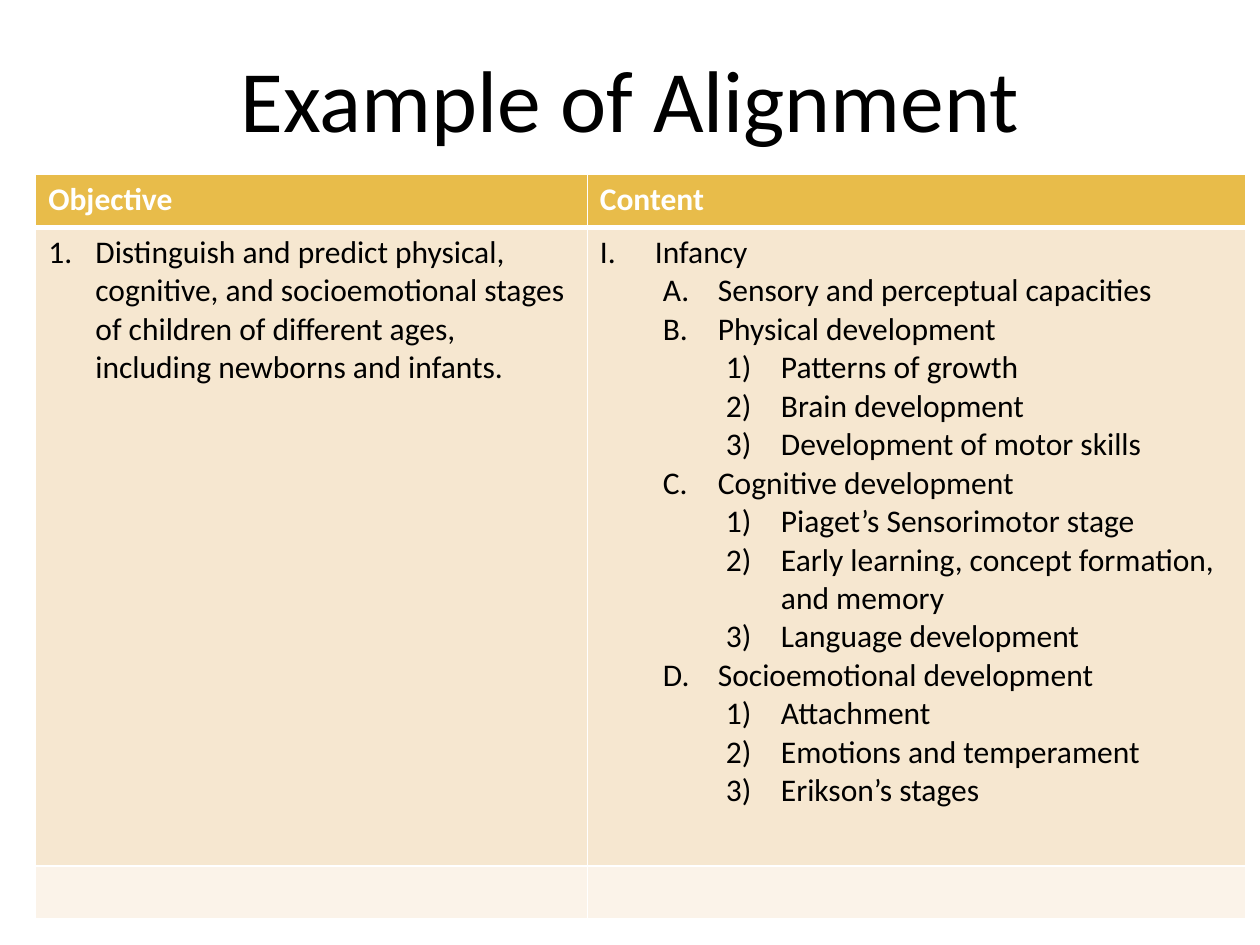
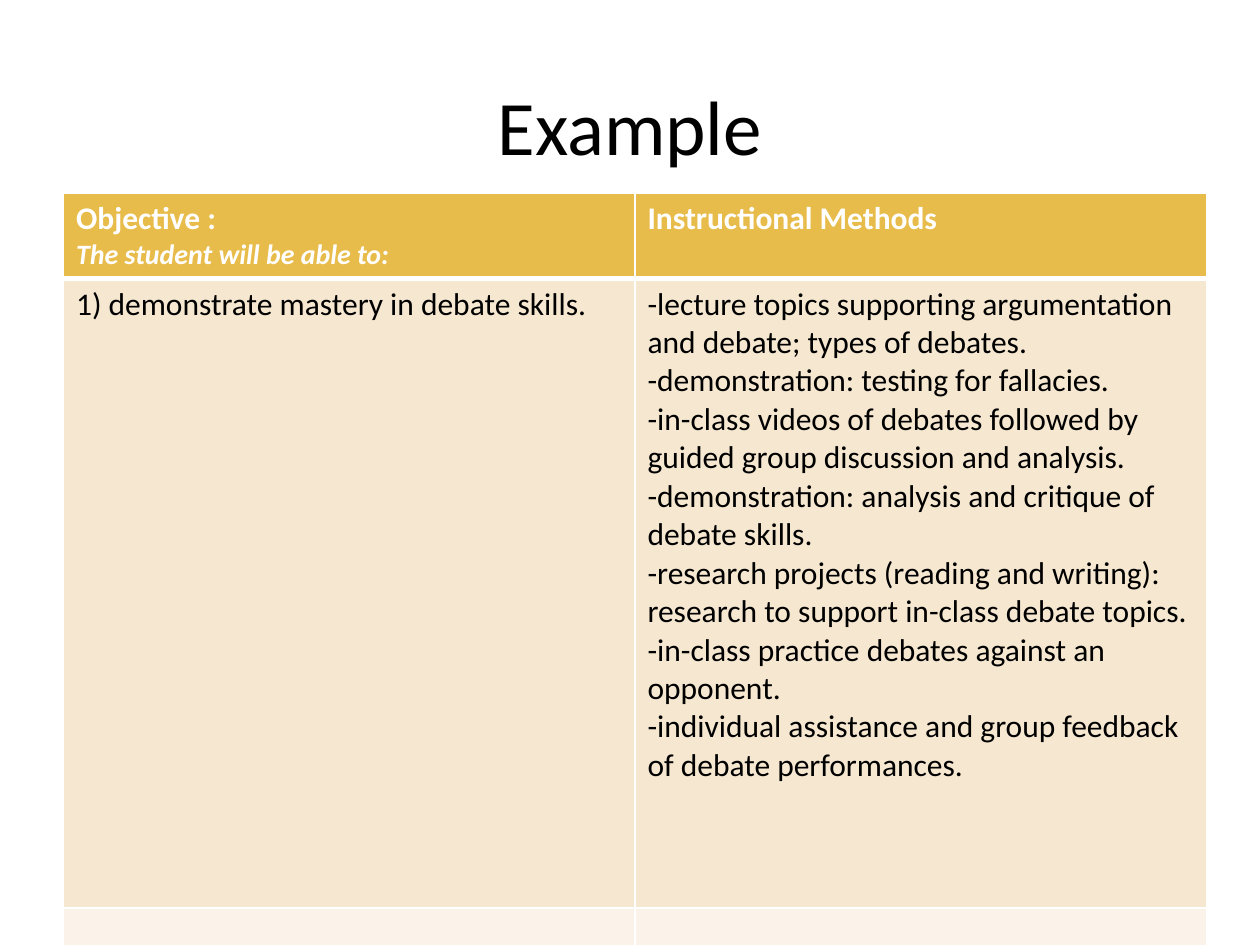
from dataclasses import dataclass

from lxml import etree
from pptx import Presentation
from pptx import util as u
from pptx.dml import color
from pptx.enum import text
from pptx.oxml import ns


@dataclass(frozen=True)
class Theme:
    font: str = "Calibri"
    ink: str = "000000"
    white: str = "FFFFFF"
    header_fill: str = "E8BC4A"
    body_fill: str = "F6E7D0"
    footer_fill: str = "FBF3E9"
    text_size: int = 18
    note_size: int = 16
    thin_border: float = 1
    header_border: float = 3


THEME = Theme()


@dataclass(frozen=True)
class Numbering:
    scheme: str
    level: int
    indent: float
    hanging: float


OBJECTIVE = Numbering("arabicPeriod", 0, 0.95, 0.95)
UNIT = Numbering("romanUcPeriod", 0, 1.11, 1.11)
TOPIC = Numbering("alphaUcPeriod", 1, 2.38, 1.11)
SUBTOPIC = Numbering("arabicParenR", 2, 3.65, 1.11)


@dataclass(frozen=True)
class Line:
    text: str
    numbering: Numbering | None = None
    size: int = THEME.text_size
    italic: bool = False


@dataclass(frozen=True)
class Title:
    text: str
    size: int
    top: float
    height: float
    bottom_inset: float = 0.13
    left: float = 1.27
    width: float = 22.86


@dataclass(frozen=True)
class AlignmentTable:
    left: float
    top: float
    columns: tuple[float, float]
    rows: tuple[float, float, float]
    header: tuple[list[Line], list[Line]]
    body: tuple[list[Line], list[Line]]


@dataclass(frozen=True)
class RowStyle:
    fill: str
    ink: str
    bold: bool
    top_border: float
    bottom_border: float


ROW_STYLES = (
    RowStyle(THEME.header_fill, THEME.white, True, THEME.thin_border, THEME.header_border),
    RowStyle(THEME.body_fill, THEME.ink, False, THEME.header_border, THEME.thin_border),
    RowStyle(THEME.footer_fill, THEME.ink, False, THEME.thin_border, THEME.thin_border),
)

SLIDES = (
    (
        Title("Example of Alignment", 50, top=0.58, height=2.79),
        AlignmentTable(
            left=0.72, top=3.52, columns=(11.12, 13.28), rows=(1.06, 12.88, 1.06),
            header=([Line("Objective")], [Line("Content")]),
            body=(
                [Line("Distinguish and predict physical, cognitive, and socioemotional stages "
                      "of children of different ages, including newborns and infants.", OBJECTIVE)],
                [
                    Line("Infancy", UNIT),
                    Line("Sensory and perceptual capacities", TOPIC),
                    Line("Physical development", TOPIC),
                    Line("Patterns of growth", SUBTOPIC),
                    Line("Brain development", SUBTOPIC),
                    Line("Development of motor skills", SUBTOPIC),
                    Line("Cognitive development", TOPIC),
                    Line("Piaget’s Sensorimotor stage", SUBTOPIC),
                    Line("Early learning, concept formation, and memory", SUBTOPIC),
                    Line("Language development", SUBTOPIC),
                    Line("Socioemotional development", TOPIC),
                    Line("Attachment", SUBTOPIC),
                    Line("Emotions and temperament", SUBTOPIC),
                    Line("Erikson’s stages", SUBTOPIC),
                ],
            ),
        ),
    ),
    (
        Title("Example", 44, top=1.27, height=3.18, bottom_inset=0.81),
        AlignmentTable(
            left=1.28, top=3.9, columns=(11.52, 11.52), rows=(1.69, 12.68, 0.78),
            header=(
                [Line("Objective :"),
                 Line("The student will be able to:", size=THEME.note_size, italic=True)],
                [Line("Instructional Methods")],
            ),
            body=(
                [Line("1) demonstrate mastery in debate skills.")],
                [
                    Line("-lecture topics supporting argumentation and debate; types of debates."),
                    Line("-demonstration: testing for fallacies."),
                    Line("-in-class videos of debates followed by guided group discussion and analysis."),
                    Line("-demonstration: analysis and critique of debate skills."),
                    Line("-research projects (reading and writing): research to support "
                         "in-class debate topics."),
                    Line("-in-class practice debates against an opponent."),
                    Line("-individual assistance and group feedback of debate performances."),
                ],
            ),
        ),
    ),
)


def set_attributes(target, values: dict) -> None:
    for name, value in values.items():
        setattr(target, name, value)


def format_font(font, size: int, ink: str, bold: bool = False, italic: bool = False) -> None:
    set_attributes(font, {"name": THEME.font, "size": u.Pt(size), "bold": bold, "italic": italic})
    font.color.rgb = color.RGBColor.from_string(ink)


def add_title(slide, title: Title) -> None:
    shape = slide.shapes.title
    set_attributes(shape, {name: u.Cm(getattr(title, name))
                           for name in ("left", "top", "width", "height")})
    frame = shape.text_frame
    set_attributes(frame, {
        "text": title.text,
        "word_wrap": True,
        "auto_size": text.MSO_AUTO_SIZE.NONE,
        "vertical_anchor": text.MSO_ANCHOR.MIDDLE,
        "margin_bottom": u.Cm(title.bottom_inset),
    })
    paragraph = frame.paragraphs[0]
    paragraph.alignment = text.PP_ALIGN.CENTER
    format_font(paragraph.runs[0].font, title.size, THEME.ink)


def number_paragraph(paragraph, numbering: Numbering) -> None:
    paragraph.level = numbering.level
    properties = paragraph._p.get_or_add_pPr()
    properties.set("marL", str(u.Cm(numbering.indent)))
    properties.set("indent", str(-u.Cm(numbering.hanging)))
    etree.SubElement(properties, ns.qn("a:buFont"), typeface="+mj-lt")
    etree.SubElement(properties, ns.qn("a:buAutoNum"), type=numbering.scheme)


def add_borders(cell, style: RowStyle) -> None:
    widths = {"L": THEME.thin_border, "R": THEME.thin_border,
              "T": style.top_border, "B": style.bottom_border}
    properties = cell._tc.get_or_add_tcPr()
    for side, width in widths.items():
        border = etree.SubElement(properties, ns.qn(f"a:ln{side}"), w=str(u.Pt(width)))
        fill = etree.SubElement(border, ns.qn("a:solidFill"))
        etree.SubElement(fill, ns.qn("a:srgbClr"), val=THEME.white)


def fill_cell(cell, lines: list[Line], style: RowStyle) -> None:
    add_borders(cell, style)
    cell.fill.solid()
    cell.fill.fore_color.rgb = color.RGBColor.from_string(style.fill)
    if not lines:
        # Without margins an empty row can be as low as its line of text.
        set_attributes(cell, {"margin_top": 0, "margin_bottom": 0})
    frame = cell.text_frame
    for index, line in enumerate(lines):
        paragraph = frame.add_paragraph() if index else frame.paragraphs[0]
        if line.numbering:
            number_paragraph(paragraph, line.numbering)
        run = paragraph.add_run()
        run.text = line.text
        format_font(run.font, line.size, style.ink, style.bold, line.italic)


def add_alignment_table(slide, content: AlignmentTable) -> None:
    shape = slide.shapes.add_table(
        len(content.rows), len(content.columns), u.Cm(content.left), u.Cm(content.top),
        u.Cm(sum(content.columns)), u.Cm(sum(content.rows)))
    table = shape.table
    table.horz_banding = False
    for column, width in zip(table.columns, content.columns):
        column.width = u.Cm(width)
    cells = (content.header, content.body, ([], []))
    for row, height, row_lines, style in zip(table.rows, content.rows, cells, ROW_STYLES):
        row.height = u.Cm(height)
        for cell, lines in zip(row.cells, row_lines):
            fill_cell(cell, lines, style)


def main() -> None:
    presentation = Presentation()
    set_attributes(presentation, {"slide_width": u.Cm(25.4), "slide_height": u.Cm(19.05)})
    title_only = presentation.slide_layouts.get_by_name("Title Only")
    for title, table in SLIDES:
        slide = presentation.slides.add_slide(title_only)
        add_title(slide, title)
        add_alignment_table(slide, table)
    presentation.save("out.pptx")


if __name__ == "__main__":
    main()
